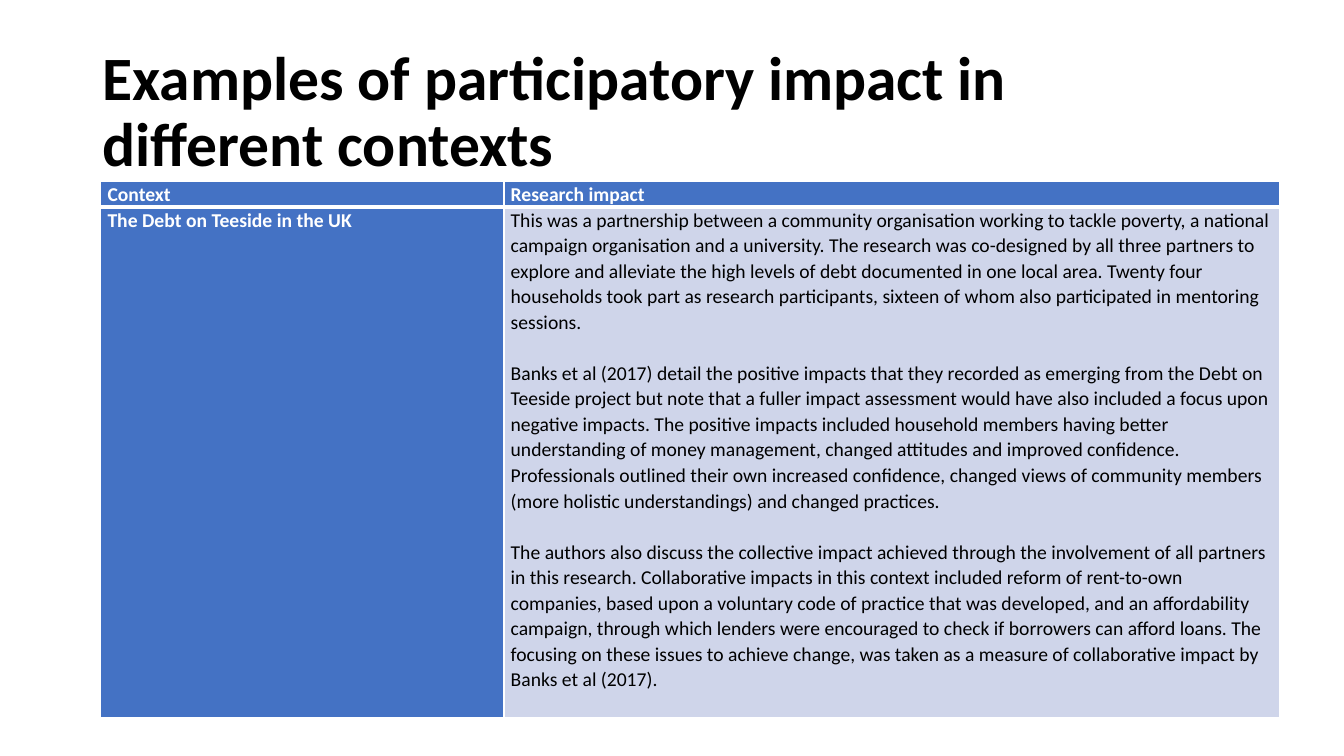
from pptx import Presentation
from pptx.dml.color import RGBColor
from pptx.enum import text
from pptx.oxml import parse_xml
from pptx.oxml import ns
from pptx.util import Pt

COLORS = {"black": "000000", "white": "FFFFFF", "blue": "4472C4", "pale": "CFD5EA"}
CONTEXT = "The Debt on Teeside in the UK"
IMPACT = [
    "This was a partnership between a community organisation working to tackle poverty, a national "
    "campaign organisation and a university. The research was co-designed by all three partners to "
    "explore and alleviate the high levels of debt documented in one local area. Twenty four "
    "households took part as research participants, sixteen of whom also participated in mentoring "
    "sessions.",
    "Banks et al (2017) detail the positive impacts that they recorded as emerging from the Debt on "
    "Teeside project but note that a fuller impact assessment would have also included a focus upon "
    "negative impacts. The positive impacts included household members having better "
    "understanding of money management, changed attitudes and improved confidence. "
    "Professionals outlined their own increased confidence, changed views of community members "
    "(more holistic understandings) and changed practices.",
    "The authors also discuss the collective impact achieved through the involvement of all partners "
    "in this research. Collaborative impacts in this context included reform of rent-to-own "
    "companies, based upon a voluntary code of practice that was developed, and an affordability "
    "campaign, through which lenders were encouraged to check if borrowers can afford loans. The "
    "focusing on these issues to achieve change, was taken as a measure of collaborative impact by "
    "Banks et al (2017).",
]


def write(tf, paragraphs, size, color, bold, spacing, gap=0):
    for i, line in enumerate(paragraphs):
        p = tf.paragraphs[0] if i == 0 else tf.add_paragraph()
        p.alignment = text.PP_ALIGN.LEFT
        p.line_spacing = spacing
        p.space_before = Pt(gap if i else 0)
        r = p.add_run()
        r.text = line
        font = {"name": "Calibri", "size": Pt(size), "bold": bold}
        for key, value in font.items():
            setattr(r.font, key, value)
        r.font.color.rgb = RGBColor.from_string(COLORS[color])


def add_border(cell, side, width):
    cell._tc.get_or_add_tcPr().append(parse_xml(
        f'<a:{side} {ns.nsdecls("a")} w="{Pt(width)}"><a:solidFill>'
        f'<a:srgbClr val="{COLORS["white"]}"/></a:solidFill></a:{side}>'))


prs = Presentation()
prs.slide_width, prs.slide_height = Pt(960), Pt(540)
s = prs.slides.add_slide(prs.slide_layouts[5])

title = s.shapes.title
box = {"left": 66, "top": 28.75, "width": 828, "height": 104.4}
for key, value in box.items():
    setattr(title, key, Pt(value))
tf = title.text_frame
tf.word_wrap = True
tf.auto_size = text.MSO_AUTO_SIZE.NONE
tf.vertical_anchor = text.MSO_ANCHOR.MIDDLE
write(tf, ["Examples of participatory impact in different contexts"], 44, "black", True, 0.9)

widths, heights = [288, 553.7], [18.3, 364.5]
table = s.shapes.add_table(2, 2, Pt(72), Pt(129.6), Pt(sum(widths)), Pt(sum(heights))).table
for column, width in zip(table.columns, widths):
    column.width = Pt(width)
for row, height in zip(table.rows, heights):
    row.height = Pt(height)

rows = [[["Context"], ["Research impact"]], [[CONTEXT], IMPACT]]
margins = {"margin_left": 4.8, "margin_right": 4.8, "margin_top": 0, "margin_bottom": 0}
for i, row in enumerate(rows):
    for j, paragraphs in enumerate(row):
        cell = table.cell(i, j)
        is_body = i == 1 and j == 1
        for key, value in margins.items():
            setattr(cell, key, Pt(value))
        write(cell.text_frame, paragraphs, 14, "black" if is_body else "white",
              not is_body, 1.07, 18.2)
        for side, width in {"lnL": 1, "lnR": 1, "lnT": 3 if i else 1, "lnB": 1 if i else 3}.items():
            add_border(cell, side, width)
        cell.fill.solid()
        cell.fill.fore_color.rgb = RGBColor.from_string(COLORS["pale" if is_body else "blue"])

prs.save("out.pptx")
